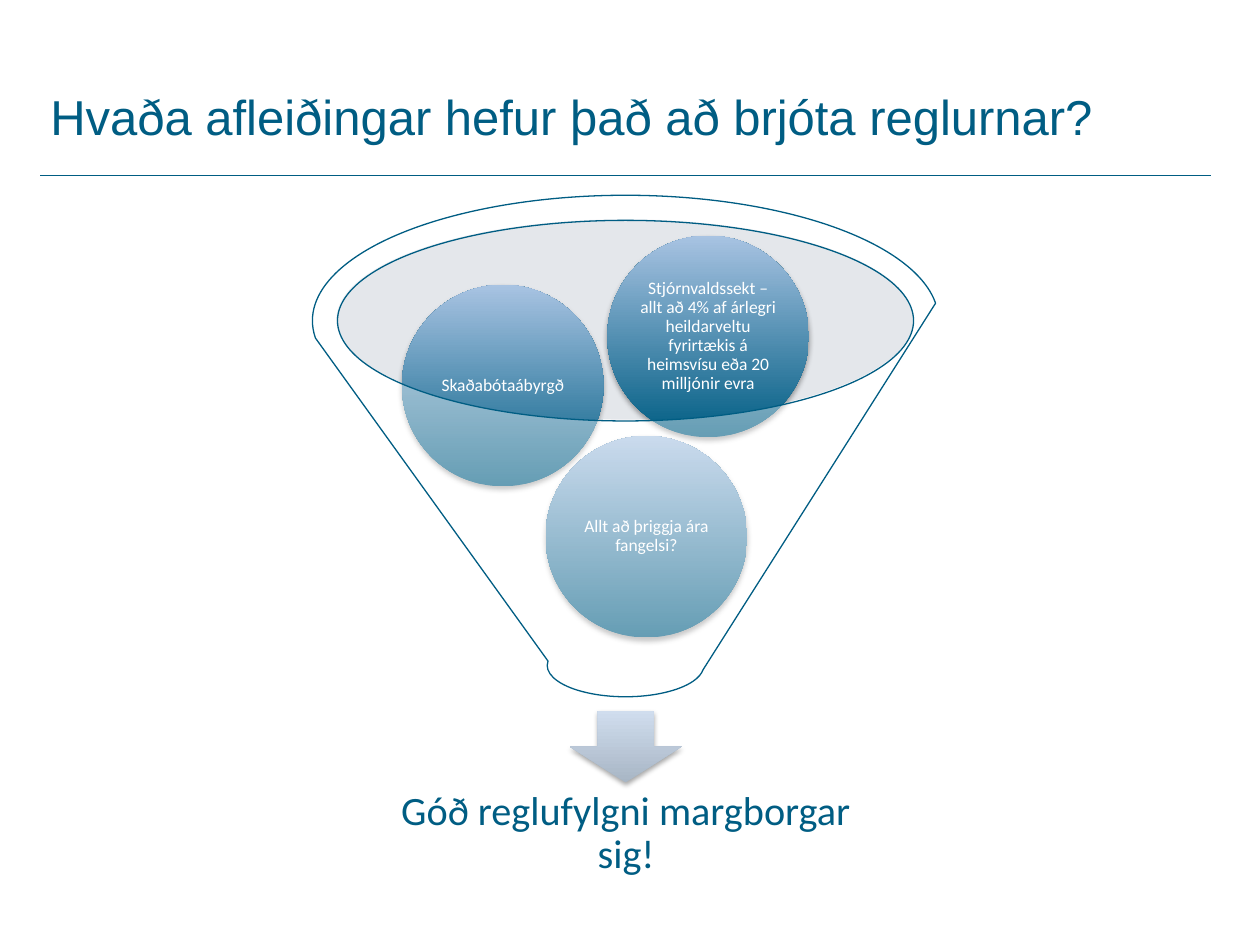
from lxml.etree import SubElement
from pptx import Presentation
from pptx.dml.color import RGBColor
from pptx.enum.shapes import MSO_CONNECTOR, MSO_SHAPE
from pptx.enum.text import MSO_ANCHOR, PP_ALIGN
from pptx.oxml.ns import qn
from pptx.util import Inches, Pt

COLORS = {
    "main": "005D83", "sky": "A8C3E2", "rim": "BDC4CD", "white": "FFFFFF",
    "arrow_dark": "A8B6C5", "arrow_light": "D0DDEE", "shadow": "000000",
}


class Deck:
    """Holds the style and the current slide."""

    def __init__(self):
        self.prs = Presentation()
        self.prs.slide_width, self.prs.slide_height = Inches(10), Inches(7.5)
        self.s = self.prs.slides.add_slide(self.prs.slide_layouts[6])

    def rgb(self, name):
        return RGBColor.from_string(COLORS[name])

    def text(self, box, text, size, font="Calibri", color="main", inset=0.01,
             anchor=MSO_ANCHOR.MIDDLE, align=PP_ALIGN.CENTER, spacing=0.9):
        tf = self.s.shapes.add_textbox(*map(Inches, box)).text_frame
        tf.word_wrap = True
        tf.vertical_anchor = anchor
        tf.margin_left = tf.margin_right = Inches(inset)
        tf.margin_top = tf.margin_bottom = Inches(inset)
        p = tf.paragraphs[0]
        p.text = text
        p.alignment, p.line_spacing = align, spacing
        p.font.name, p.font.size = font, Pt(size)
        p.font.color.rgb = self.rgb(color)

    def rule(self, x1, x2, y):
        line = self.s.shapes.add_connector(
            MSO_CONNECTOR.STRAIGHT, *map(Inches, (x1, y, x2, y)))
        line.line.color.rgb = self.rgb("main")
        line.line.width = Pt(0.35)
        SubElement(line._element.spPr, qn("a:effectLst"))

    def shape(self, kind, box):
        sp = self.s.shapes.add_shape(kind, *map(Inches, box))
        sp.shadow.inherit = False
        sp.line.fill.background()
        return sp

    def glass(self, kind, box, color, outline=None):
        sp = self.shape(kind, box)
        sp.fill.solid()
        sp.fill.fore_color.rgb = self.rgb(color)
        clr = sp._element.spPr.find(qn("a:solidFill"))[0]
        SubElement(clr, qn("a:alpha"), val="40000")
        if outline:
            sp.line.color.rgb = self.rgb(outline)
            sp.line.width = Pt(0.75)

    def gradient(self, kind, box, bottom, top):
        sp = self.shape(kind, box)
        sp.fill.gradient()
        sp.fill.gradient_angle = 90
        for stop, name, pos in zip(sp.fill.gradient_stops, (bottom, top), (0, 1)):
            stop.color.rgb = self.rgb(name)
            stop.position = pos
        effects = sp._element.spPr.find(qn("a:effectLst"))
        shadow = SubElement(effects, qn("a:outerShdw"), blurRad=str(Pt(3.1)),
                            dist=str(Pt(1.8)), dir="5400000", rotWithShape="0")
        clr = SubElement(shadow, qn("a:srgbClr"), val=COLORS["shadow"])
        SubElement(clr, qn("a:alpha"), val="35000")

    def ball(self, x, y, text, size=1.6, inner=1.13):
        self.gradient(MSO_SHAPE.OVAL, (x, y, size, size), "main", "sky")
        gap = (size - inner) / 2
        self.text((x + gap, y + gap, inner, inner), text, 10, color="white")


def main():
    d = Deck()
    d.rule(0.32, 9.61, 1.39)
    d.text((0.32, 0.61, 9.29, 0.71), "Hvaða afleiðingar hefur það að brjóta reglurnar?",
           28, font="Arial", inset=0.08, anchor=MSO_ANCHOR.TOP,
           align=PP_ALIGN.LEFT, spacing=1.0)
    d.glass(MSO_SHAPE.OVAL, (2.67, 1.74, 4.58, 1.59), "rim")
    d.gradient(MSO_SHAPE.DOWN_ARROW, (4.52, 5.64, 0.89, 0.57), "arrow_dark", "arrow_light")
    d.text((2.84, 6.09, 4.26, 1.06), "Góð reglufylgni margborgar sig!", 23, inset=0.18)
    for x, y, text in (
        (4.33, 3.46, "Allt að þriggja ára fangelsi?"),
        (3.19, 2.26, "Skaðabótaábyrgð"),
        (4.82, 1.87, "Stjórnvaldssekt – allt að 4% af árlegri heildarveltu "
                     "fyrirtækis á heimsvísu eða 20 milljónir evra"),
    ):
        d.ball(x, y, text)
    d.glass(MSO_SHAPE.FUNNEL, (2.48, 1.55, 4.97, 3.98), "white", outline="main")
    d.prs.save("out.pptx")


if __name__ == "__main__":
    main()
